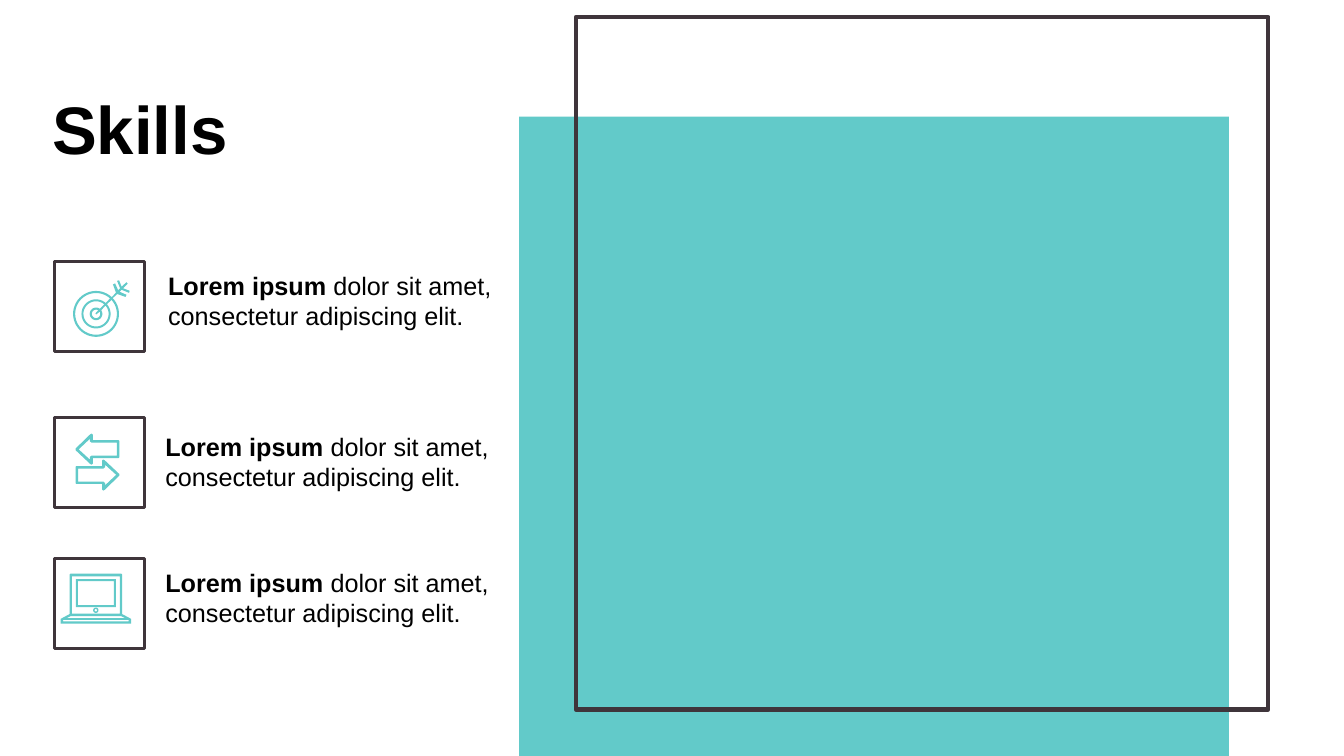
from math import cos, radians, sin

from pptx import Presentation
from pptx.dml.color import RGBColor
from pptx.enum import shapes, text
from pptx.util import Pt

TEAL = RGBColor(0x62, 0xCA, 0xC9)
DARK = RGBColor(0x3F, 0x35, 0x3B)
BLACK = RGBColor(0, 0, 0)
FONT = "Arial"


def rect(slide, x, y, w, h, fill=None, line=None):
    box = slide.shapes.add_shape(
        shapes.MSO_SHAPE.RECTANGLE, Pt(x), Pt(y), Pt(w), Pt(h))
    box.shadow.inherit = False
    if fill is None:
        box.fill.background()
    else:
        box.fill.solid()
        box.fill.fore_color.rgb = fill
    if line is None:
        box.line.fill.background()
    else:
        box.line.color.rgb = DARK
        box.line.width = Pt(line)


def label(slide, x, y, w, h, size, runs, space=None):
    frame = slide.shapes.add_textbox(Pt(x), Pt(y), Pt(w), Pt(h)).text_frame
    frame.word_wrap = True
    frame.auto_size = text.MSO_AUTO_SIZE.SHAPE_TO_FIT_TEXT
    para = frame.paragraphs[0]
    if space:
        para.line_spacing = Pt(space)
    for words, bold in runs:
        run = para.add_run()
        run.text = words
        run.font.name = FONT
        run.font.size = Pt(size)
        run.font.bold = bold
        run.font.color.rgb = BLACK


def outline(slide, x, y, loops):
    """Fill closed loops, given as offsets from x, y; inner loops are holes."""
    loops = [[(Pt(x + dx), Pt(y + dy)) for dx, dy in loop] for loop in loops]
    pen = slide.shapes.build_freeform(*loops[0][0])
    for i, loop in enumerate(loops):
        if i:
            pen.move_to(*loop[0])
        pen.add_line_segments(loop[1:], close=True)
    icon = pen.convert_to_shape()
    icon.shadow.inherit = False
    icon.fill.solid()
    icon.fill.fore_color.rgb = TEAL
    icon.line.fill.background()


def arc(r, start, end, steps=48):
    turns = [radians(start + (end - start) * i / steps)
             for i in range(steps + 1)]
    return [(r * cos(a), r * sin(a)) for a in turns]


def mirror(half):
    """Complete a loop that is even about the vertical axis."""
    return half + [(-x, y) for x, y in reversed(half)]


def target(slide, x, y):
    # One side of the dart, reflected across its diagonal shaft
    side = [(11.3, -12), (14.2, -15.2), (12.1, -21), (13.6, -21.8),
            (15.8, -16.9), (17.2, -18.3), (15, -23.6), (16.5, -24),
            (18.3, -19.3), (21.6, -22.6)]
    dart = side + [(-dy, -dx) for dx, dy in reversed(side)]
    outline(slide, x, y, [
        dart + arc(16.4, -43, 313),
        arc(14.9, -42, 312) + arc(10.4, -48, -402),
        arc(9, -41, 311) + arc(4.5, -54, -396),
        arc(3, -32, 302) + [(-0.4, -0.4), (0, 0.5)],
    ])


def arrow(slide, x, y, turn):
    outer = [(-15.6, 3.4), (-15.1, 2.9), (3.3, 2.9), (3.3, -1.1),
             (4.1, -1.8), (5.1, -1.4), (15.6, 8.5), (15.6, 9.7),
             (5.1, 19.9), (4.1, 20.3), (3.3, 19.6), (3.3, 15.6),
             (-15.1, 15.6), (-15.6, 15.1)]
    inner = [(-13.8, 4.7), (4.2, 4.7), (5.4, 3.6), (5.4, 1.8), (13.4, 9.1),
             (5.4, 16.6), (5.4, 14.9), (4.2, 13.9), (-13.8, 13.9)]
    outline(slide, x, y, [[(turn * dx, turn * dy) for dx, dy in loop]
                          for loop in (outer, inner)])


def laptop(slide, x, y):
    screen = [[(14.3, 4), (14.3, 24)], [(12.9, 5.5), (12.9, 22.5)]]
    body = [[(18, 0), (18.7, 0.7), (18.7, 28.9), (25.2, 32.4), (25.2, 35.7)],
            [(17.2, 2), (17.2, 28.7)],
            [(18.1, 30.4), (20.9, 31.9)],
            [(23.4, 33.2), (23.4, 34.2)]]
    for part in (screen, body):
        outline(slide, x, y, [mirror(half) for half in part])
    outline(slide, x, y + 26.2, [arc(1.9, 0, 360), arc(0.9, 0, 360)])


def main():
    deck = Presentation()
    deck.slide_width, deck.slide_height = Pt(960), Pt(540)
    slide = deck.slides.add_slide(deck.slide_layouts[6])

    # Large panel and its offset frame
    rect(slide, 370.8, 83.4, 507, 456.6, fill=TEAL)
    rect(slide, 411.4, 12.2, 494.6, 494.6, line=3)

    # Skill rows: icon frame top, text left and top
    for top, left, head in ((186.7, 113, 189.4), (298.2, 111, 304.6),
                            (398.9, 111, 401.4)):
        rect(slide, 38.9, top, 64.6, 64.6, line=2.25)
        label(slide, left, head, 257.8, 50.9, 18, [
            ("Lorem ipsum ", True),
            ("dolor sit amet, consectetur adipiscing elit.", False)])

    # Icons
    target(slide, 68.6, 224.2)
    for turn in (1, -1):
        arrow(slide, 69.6, 330.1, turn)
    laptop(slide, 68.5, 409.7)

    # Title
    label(slide, 30.2, 76.3, 339, 48.2, 48, [("Skills", True)], space=40)
    deck.save("out.pptx")


if __name__ == "__main__":
    main()
